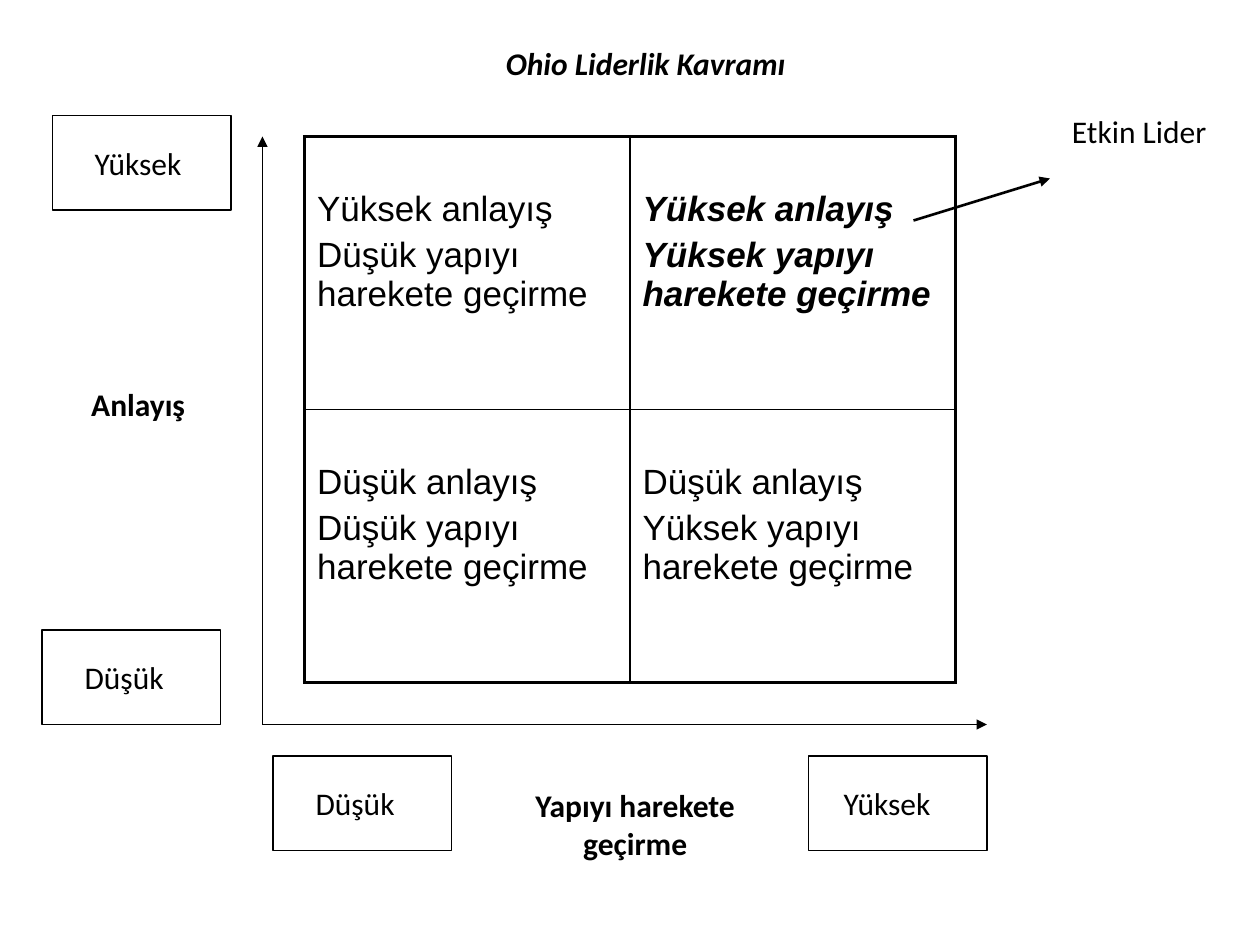
from lxml.etree import SubElement
from pptx import Presentation
from pptx.dml.color import RGBColor
from pptx.enum.shapes import MSO_CONNECTOR, MSO_SHAPE
from pptx.enum.text import MSO_ANCHOR, MSO_AUTO_SIZE, PP_ALIGN
from pptx.oxml import parse_xml
from pptx.oxml.ns import nsdecls, qn
from pptx.util import Pt

BLACK = "000000"


def paint(fill, color):
    fill.solid()
    fill.fore_color.rgb = RGBColor.from_string(color)


def write(frame, lines, font="Calibri", size=18, bold=False, italic=False,
          align=PP_ALIGN.CENTER, anchor=MSO_ANCHOR.MIDDLE, gap=0):
    """Fill a text frame, one paragraph a line, with gap points between them."""
    frame.word_wrap = True
    frame.auto_size = MSO_AUTO_SIZE.NONE
    frame.vertical_anchor = anchor
    for index, line in enumerate(lines):
        para = frame.add_paragraph() if index else frame.paragraphs[0]
        para.alignment = align
        para.space_before = Pt(gap if index else 0)
        span = para.add_run()
        span.text = line
        span.font.name = font
        span.font.size = Pt(size)
        span.font.bold = bold
        span.font.italic = italic
        paint(span.font.fill, BLACK)


deck = Presentation()
deck.slide_width, deck.slide_height = Pt(720), Pt(540)
page = deck.slides.add_slide(deck.slide_layouts[5])

title = page.shapes.title
title.left, title.top, title.width, title.height = Pt(162), Pt(18), Pt(414), Pt(36)
write(title.text_frame, ["Ohio Liderlik Kavramı"], bold=True, italic=True)

# Leadership quadrants
quadrants = [
    [("Yüksek anlayış", "Düşük yapıyı harekete geçirme"),
     ("Yüksek anlayış", "Yüksek yapıyı harekete geçirme")],
    [("Düşük anlayış", "Düşük yapıyı harekete geçirme"),
     ("Düşük anlayış", "Yüksek yapıyı harekete geçirme")],
]
grid = page.shapes.add_table(2, 2, Pt(174), Pt(78), Pt(372), Pt(312)).table
grid.first_row = grid.horz_banding = False
for row, pair in enumerate(quadrants):
    for column, lines in enumerate(pair):
        cell = grid.cell(row, column)
        effective = (row, column) == (0, 1)
        write(cell.text_frame, lines, font="Arial", size=20, bold=effective,
              italic=effective, align=PP_ALIGN.LEFT, anchor=MSO_ANCHOR.TOP, gap=4)
        cell.vertical_anchor = MSO_ANCHOR.TOP
        cell.margin_top = Pt(30.6)
        cell.fill.background()
        outer_sides = {"L": column == 0, "R": column == 1, "T": row == 0, "B": row == 1}
        for position, (side, outer) in enumerate(outer_sides.items()):
            border = parse_xml(
                f'<a:ln{side} {nsdecls("a")} w="{Pt(2.25 if outer else 1)}">'
                f'<a:solidFill><a:srgbClr val="{BLACK}"/></a:solidFill></a:ln{side}>')
            cell._tc.get_or_add_tcPr().insert(position, border)

# Scale ends: text, left, top, space on the right that shifts the text
scale_ends = [
    ("Yüksek", 30, 66, 4),
    ("Düşük", 24, 360, 8),
    ("Düşük", 156, 432, 8),
    ("Yüksek", 462, 432, 12),
]
for text, left, top, shift in scale_ends:
    box = page.shapes.add_shape(MSO_SHAPE.RECTANGLE, Pt(left), Pt(top), Pt(102), Pt(54))
    box.shadow.inherit = False
    box.fill.background()
    paint(box.line.fill, BLACK)
    box.line.width = Pt(0.75)
    box.text_frame.margin_right = Pt(7.2 + shift)
    write(box.text_frame, [text])

# Axis names and the callout: lines, left, top, width, height, bold
labels = [
    (["Anlayış"], 28, 204, 102, 54, True),
    (["Yapıyı harekete", "geçirme"], 282, 426, 162, 90, True),
    (["Etkin Lider"], 600, 54, 102, 42, False),
]
for lines, left, top, width, height, bold in labels:
    label = page.shapes.add_textbox(Pt(left), Pt(top), Pt(width), Pt(height))
    write(label.text_frame, lines, bold=bold)

# Both axes and the callout arrow: start, end, weight
arrows = [
    ((150, 414), (150, 78), 0.75),
    ((150, 414), (564, 414), 0.75),
    ((522, 126), (600, 102), 1.5),
]
for start, end, weight in arrows:
    arrow = page.shapes.add_connector(
        MSO_CONNECTOR.STRAIGHT, *(Pt(value) for value in start + end))
    paint(arrow.line.fill, BLACK)
    arrow.line.width = Pt(weight)
    properties = arrow.element.spPr
    SubElement(properties.find(qn("a:ln")), qn("a:tailEnd"), type="triangle")
    SubElement(properties, qn("a:effectLst"))

deck.save("out.pptx")
